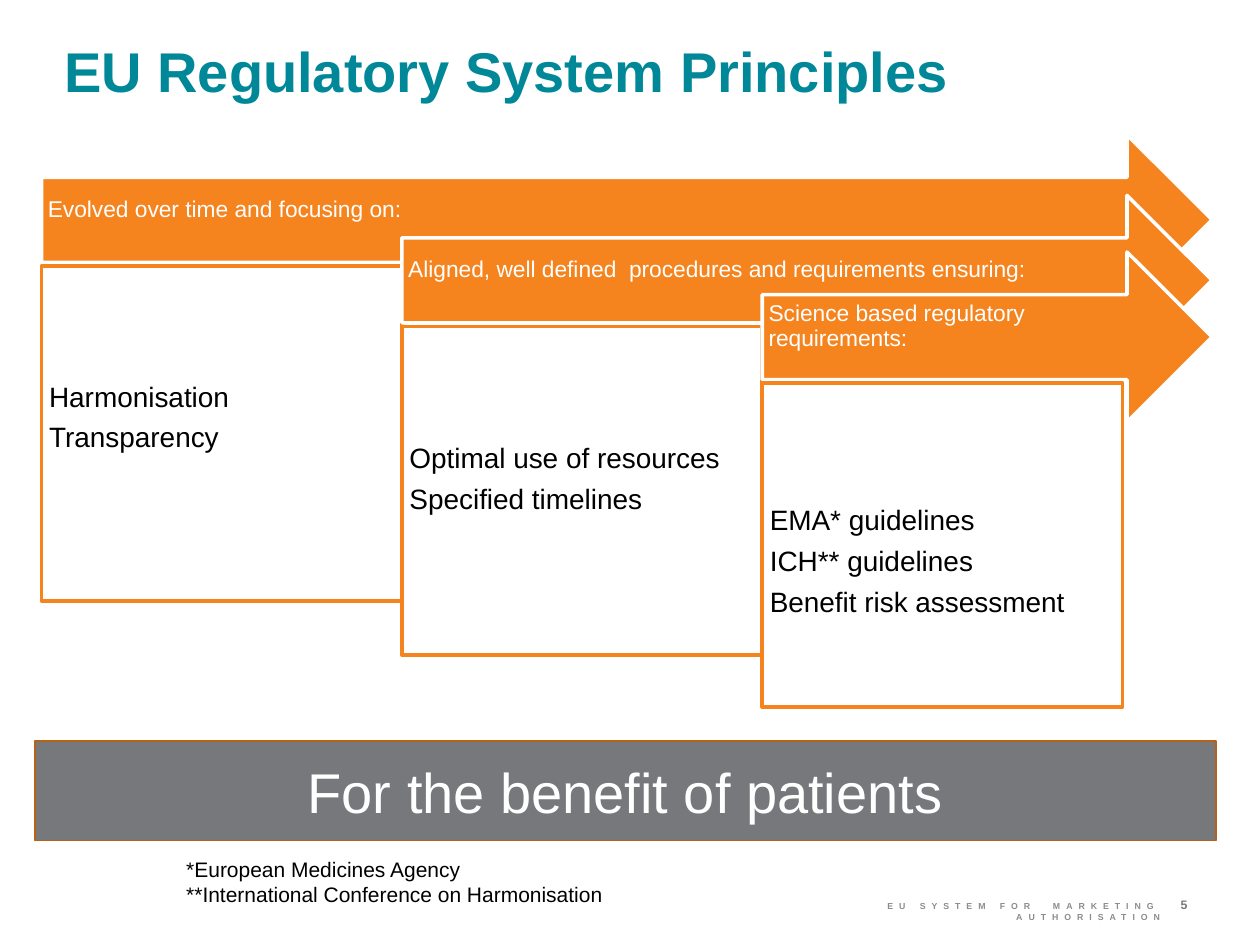
"""Build the slide on the principles of the EU regulatory system."""
from pptx import Presentation
from pptx.dml.color import RGBColor
from pptx.enum.shapes import MSO_SHAPE as Shape
from pptx.enum.text import MSO_ANCHOR as Anchor, PP_ALIGN as Align
from pptx.util import Inches, Pt

TITLE = "EU Regulatory System Principles"
STAGES = [
    {"head": "Evolved over time and focusing on:",
     "items": ["Harmonisation", "Transparency"],
     "top": 1.07, "height": 2.66, "inset": 0.93},
    {"head": "Aligned, well defined  procedures and requirements ensuring:",
     "items": ["Optimal use of resources", "Specified timelines"],
     "top": 1.55, "height": 2.61, "inset": 0.94},
    {"head": "Science based regulatory requirements:",
     "items": ["EMA* guidelines", "ICH** guidelines", "Benefit risk assessment"],
     "top": 2.0, "height": 2.57, "inset": 0.98},
]
BENEFIT = "For the benefit of patients"
NOTES = ["*European Medicines Agency", "**International Conference on Harmonisation"]
FOOTER = "EU SYSTEM FOR  MARKETING AUTHORISATION"
PAGE = "5"

TEAL, ORANGE, GREY, WHITE, BLACK = "008898", "F5841F", "77787B", "FFFFFF", "000000"
LEFT, RIGHT, COLUMN = 0.33, 9.62, 2.86
ARROW_HEIGHT, BOX_OFFSET = 1.35, 1.04


def rgb(value):
    """Turn a hex string into a colour."""
    return RGBColor.from_string(value)


def write(sp, lines, size, color, bold=False, align=Align.LEFT, anchor=Anchor.TOP,
          insets=(0, 0, 0, 0), spacing=None, after=0, tracking=None):
    """Write lines of text into a shape, one paragraph each."""
    tf = sp.text_frame
    tf.word_wrap = True
    tf.vertical_anchor = anchor
    tf.margin_left, tf.margin_top, tf.margin_right, tf.margin_bottom = map(Inches, insets)
    for i, line in enumerate(lines):
        p = tf.paragraphs[0] if i == 0 else tf.add_paragraph()
        p.alignment, p.line_spacing, p.space_after = align, spacing, Pt(after)
        r = p.add_run()
        r.text = line
        r.font.name, r.font.size, r.font.bold = "Arial", Pt(size), bold
        r.font.color.rgb = rgb(color)
        if tracking:
            r.font._element.set("spc", str(round(tracking * 100)))


def add_shape(s, kind, box, fill, line, weight):
    """Add a filled and outlined preset shape."""
    sp = s.shapes.add_shape(kind, *map(Inches, box))
    sp.shadow.inherit = False
    sp.fill.solid()
    sp.fill.fore_color.rgb = rgb(fill)
    sp.line.color.rgb = rgb(line)
    sp.line.width = Pt(weight)
    return sp


def add_text(s, box, lines, size, color, **fmt):
    """Add a text box."""
    write(s.shapes.add_textbox(*map(Inches, box)), lines, size, color, **fmt)


def add_stage(s, index, stage):
    """Add one arrow with the box of items below it."""
    left, top = LEFT + index * COLUMN, stage["top"]
    arrow = add_shape(s, Shape.RIGHT_ARROW, (left, top, RIGHT - left, ARROW_HEIGHT),
                      ORANGE, WHITE, 2)
    write(arrow, [stage["head"]], 13, WHITE, anchor=Anchor.MIDDLE,
          insets=(0.05, 0.05, 0.28, 0.21), spacing=0.9)
    box = add_shape(s, Shape.RECTANGLE, (left, top + BOX_OFFSET, COLUMN, stage["height"]),
                    WHITE, ORANGE, 2)
    write(box, stage["items"], 16, BLACK, insets=(0.06, stage["inset"], 0.06, 0.06),
          spacing=0.9, after=6)


def main():
    """Build and save the slide."""
    prs = Presentation()
    prs.slide_width, prs.slide_height = Inches(10), Inches(7.5)
    s = prs.slides.add_slide(prs.slide_layouts[6])
    add_text(s, (0.51, 0.29, 8.9, 0.79), [TITLE], 32, TEAL, bold=True)
    for index, stage in enumerate(STAGES):
        add_stage(s, index, stage)
    bar = add_shape(s, Shape.RECTANGLE, (0.28, 5.88, 9.37, 0.79), GREY, "B56217", 1)
    write(bar, [BENEFIT], 32, WHITE, align=Align.CENTER, anchor=Anchor.MIDDLE,
          insets=(0.1, 0.05, 0.1, 0.05))
    add_text(s, (6.14, 7.15, 3.07, 0.16), [FOOTER], 5, "8C8C8C", bold=True,
             align=Align.RIGHT, tracking=3.4)
    add_text(s, (9.37, 7.12, 0.43, 0.17), [PAGE], 7, GREY, bold=True)
    add_text(s, (1.38, 6.75, 6.54, 0.5), NOTES, 12, BLACK, insets=(0.1, 0.05, 0.1, 0.05))
    prs.save("out.pptx")


if __name__ == "__main__":
    main()
